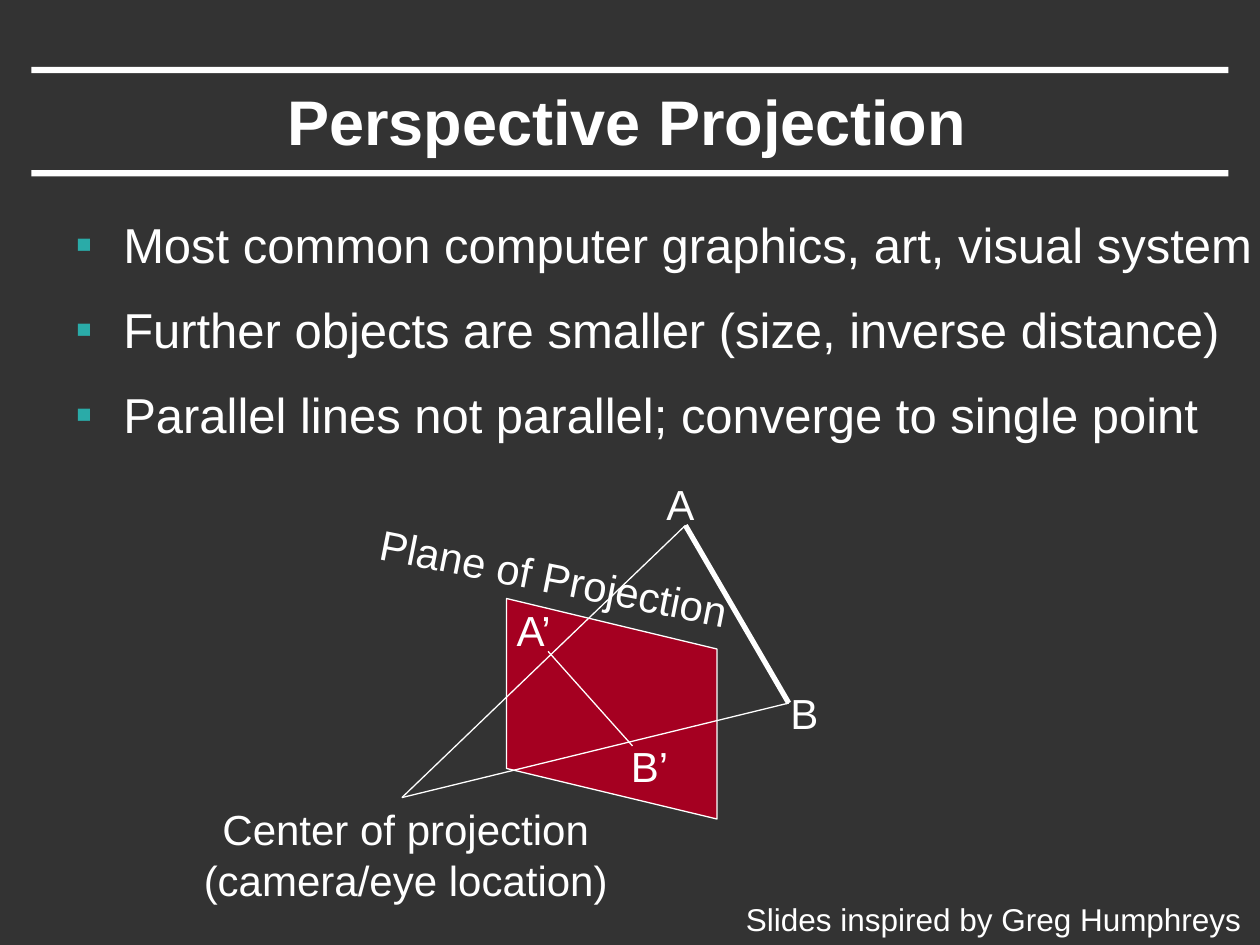
from lxml import etree
from pptx import Presentation
from pptx.dml.color import RGBColor
from pptx.enum.shapes import MSO_CONNECTOR, MSO_SHAPE
from pptx.enum.text import MSO_ANCHOR, PP_ALIGN
from pptx.oxml.ns import qn
from pptx.util import Inches, Pt

STRAIGHT = MSO_CONNECTOR.STRAIGHT
RECTANGLE, PARALLELOGRAM = MSO_SHAPE.RECTANGLE, MSO_SHAPE.PARALLELOGRAM
TOP, MIDDLE = MSO_ANCHOR.TOP, MSO_ANCHOR.MIDDLE
LEFT, CENTER, RIGHT = PP_ALIGN.LEFT, PP_ALIGN.CENTER, PP_ALIGN.RIGHT

COLUMNS, ROWS = 100, 75
BACKGROUND, WHITE, RED, TEAL = "333333", "FFFFFF", "A50021", "2AABA8"


def color(value):
    return RGBColor.from_string(value)


class SlideBuilder:
    """Draws styled elements on a slide, placed by columns and rows of a grid."""

    font = "Arial"
    text_color = WHITE
    label_size = 24

    def __init__(self, presentation):
        self.column = presentation.slide_width / COLUMNS
        self.row = presentation.slide_height / ROWS
        self.slide = presentation.slides.add_slide(presentation.slide_layouts[6])
        self.slide.background.fill.solid()
        self.slide.background.fill.fore_color.rgb = color(BACKGROUND)

    def place(self, across, down):
        return round(across * self.column), round(down * self.row)

    def shape(self, kind, left, top, width, height, fill, line_width=0):
        shape = self.slide.shapes.add_shape(
            kind, *self.place(left, top), *self.place(width, height))
        shape.shadow.inherit = False
        shape.fill.solid()
        shape.fill.fore_color.rgb = color(fill)
        if line_width:
            shape.line.color.rgb = color(WHITE)
            shape.line.width = Pt(line_width)
        else:
            shape.line.fill.background()
        return shape

    def line(self, start, end, width=0.75):
        connector = self.slide.shapes.add_connector(
            STRAIGHT, *self.place(*start), *self.place(*end))
        connector.line.color.rgb = color(WHITE)
        connector.line.width = Pt(width)
        etree.SubElement(connector._element.spPr, qn("a:effectLst"))

    def text(self, lines, left, top, width, height, size=label_size,
             bold=False, align=CENTER, anchor=TOP, wrap=False):
        box = self.slide.shapes.add_textbox(
            *self.place(left, top), *self.place(width, height))
        frame = box.text_frame
        frame.word_wrap = wrap
        frame.vertical_anchor = anchor
        frame.text = "\n".join(lines)
        for paragraph in frame.paragraphs:
            paragraph.alignment = align
            paragraph.font.name = self.font
            paragraph.font.size = Pt(size)
            paragraph.font.bold = bold
            paragraph.font.color.rgb = color(self.text_color)
        return box

    def bullets(self, lines, left, top, width, height, inset, gap):
        box = self.text(lines, left, top, width, height, 28, align=LEFT, wrap=True)
        box.text_frame.margin_top = round(inset * self.row)
        for index, paragraph in enumerate(box.text_frame.paragraphs):
            paragraph.space_before = Pt(gap if index else 0)
            properties = paragraph._p.get_or_add_pPr()
            properties.set("marL", str(Inches(0.38)))
            properties.set("indent", str(-Inches(0.38)))
            bullet_color = etree.Element(qn("a:buClr"))
            etree.SubElement(bullet_color, qn("a:srgbClr"), val=TEAL)
            bullet_font = etree.Element(qn("a:buFont"), typeface=self.font)
            bullet = etree.Element(qn("a:buChar"), char="▪")
            default_run = properties.find(qn("a:defRPr"))
            for element in (bullet_color, bullet_font, bullet):
                default_run.addprevious(element)


def main():
    presentation = Presentation()
    presentation.slide_width, presentation.slide_height = Inches(10), Inches(7.5)
    builder = SlideBuilder(presentation)

    for rule_top in (13.5, 5.3):
        builder.shape(RECTANGLE, 2.5, rule_top, 95, 0.5, WHITE)
    builder.text(["Perspective Projection"], 7.4, 5.8, 84.7, 7.5,
                 size=36, bold=True, anchor=MIDDLE, wrap=True)
    builder.bullets([
        "Most common computer graphics, art, visual system",
        "Further objects are smaller (size, inverse distance)",
        "Parallel lines not parallel; converge to single point",
    ], 5, 9.7, 97.8, 64.7, inset=7.3, gap=15)

    plane = builder.shape(PARALLELOGRAM, 39.8, 47.9, 17.5, 16.7, RED, 0.75)
    plane.adjustments[0] = 0.24
    plane.rotation = 90

    point_a, point_b, eye = (54.4, 41.7), (62.6, 55.8), (31.9, 63.3)
    builder.line(point_a, point_b, 3)
    builder.line(point_a, eye)
    builder.line(point_b, eye)
    builder.line((43.5, 51.7), (50.2, 59.2))

    for name, left, top, width in (
        ("B", 61.7, 54.1, 4.3),
        ("A’", 39.3, 47.5, 6.1),
        ("B’", 48.6, 58.3, 5.9),
        ("A", 51.8, 37.5, 4.4),
    ):
        builder.text([name], left, top, width, 5)
    builder.text(["Center of projection", "(camera/eye location)"],
                 15, 63.3, 34.4, 9.1)
    builder.text(["Plane of Projection"], 28.8, 43.3, 30.3, 5).rotation = 11.2
    builder.text(["Slides inspired by Greg Humphreys"], 57, 70.9, 42.5, 4,
                 size=18, align=RIGHT, wrap=True)

    presentation.save("out.pptx")


if __name__ == "__main__":
    main()
